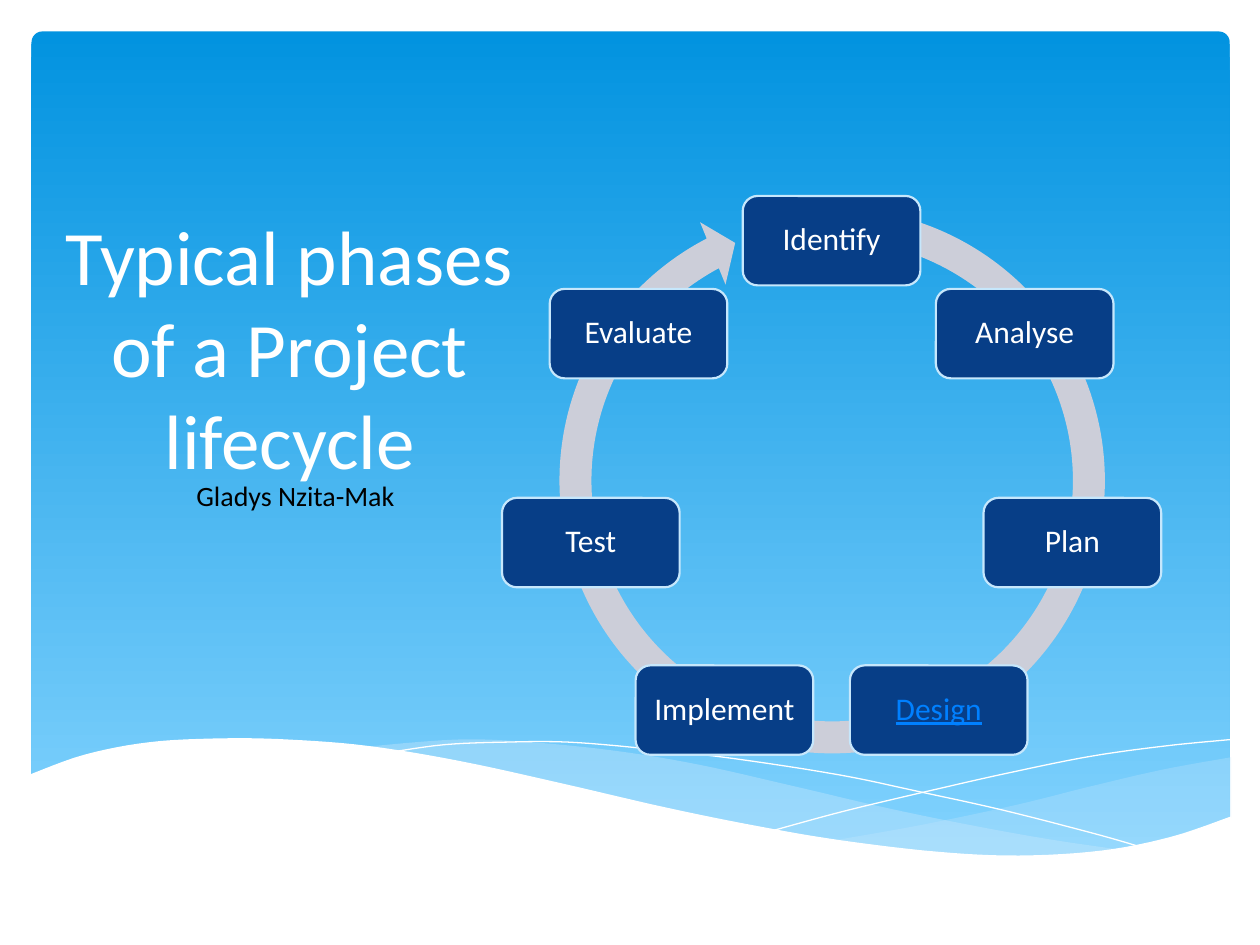
from dataclasses import dataclass, field
from math import cos, pi, sin
from lxml.etree import SubElement
from pptx import Presentation
from pptx.dml.color import RGBColor
from pptx.enum.shapes import MSO_SHAPE
from pptx.enum.text import MSO_ANCHOR, PP_ALIGN
from pptx.oxml.ns import qn
from pptx.slide import Slide
from pptx.util import Inches, Pt


def tint(color, value):
    color.rgb = RGBColor.from_string(value)


def apply(target, values):
    for name, value in values.items():
        setattr(target, name, value)


def smooth(knots, steps=6):
    ends = [knots[0], *knots, knots[-1]]
    points = [knots[0]]
    for a, b, c, d in zip(ends, ends[1:], ends[2:], ends[3:]):
        for step in range(1, steps + 1):
            t = step / steps
            points.append(tuple(
                (2 * q + (r - p) * t + (2 * p - 5 * q + 4 * r - s) * t ** 2
                 + (3 * q - p - 3 * r + s) * t ** 3) / 2
                for p, q, r, s in zip(a, b, c, d)))
    return points


@dataclass
class Deck:
    slide: Slide
    font: str = "Calibri"
    navy: str = "073E87"
    pale: str = "C6E7FC"
    white: str = "FFFFFF"
    inset: dict = field(default_factory=lambda: {
        "margin_left": Inches(0.1), "margin_right": Inches(0.1),
        "margin_top": Inches(0.05), "margin_bottom": Inches(0.05)})

    def letter(self, shape, text, size, color, anchor, **extra):
        frame = shape.text_frame
        apply(frame, {**self.inset, "word_wrap": True,
                      "vertical_anchor": anchor})
        line = frame.paragraphs[0]
        apply(line, {"alignment": PP_ALIGN.CENTER,
                     "line_spacing": extra.pop("spacing", 1.0)})
        run = line.add_run()
        run.text = text
        apply(run.font, {"name": self.font, "size": Pt(size), **extra})
        tint(run.font.color, color)

    def label(self, box, text, size, color, anchor):
        shape = self.slide.shapes.add_textbox(*map(Inches, box))
        self.letter(shape, text, size, color, anchor)

    def paint(self, shape, fill=None, line=None, width=0, alpha=None):
        shape.shadow.inherit = False
        if fill:
            shape.fill.solid()
            tint(shape.fill.fore_color, fill)
        else:
            shape.fill.background()
        if alpha:
            node = shape.element.spPr.find(".//" + qn("a:srgbClr"))
            SubElement(node, qn("a:alpha")).set("val", str(alpha * 1000))
        if line:
            tint(shape.line.color, line)
            shape.line.width = Pt(width)
        else:
            shape.line.fill.background()
        return shape

    def shape(self, kind, box, adjust=(), **style):
        shape = self.slide.shapes.add_shape(kind, *map(Inches, box))
        for spot, value in enumerate(adjust):
            shape.adjustments[spot] = value
        return self.paint(shape, **style)

    def panel(self, box, top, bottom):
        shape = self.shape(MSO_SHAPE.ROUNDED_RECTANGLE, box, [0.013])
        shape.fill.gradient()
        shape.fill.gradient_angle = 270
        for stop, color, place in zip(shape.fill.gradient_stops,
                                      (top, bottom), (0, 1)):
            tint(stop.color, color)
            stop.position = place

    def wave(self, points, close=True, **style):
        spots = [(Inches(x), Inches(y)) for x, y in points]
        pen = self.slide.shapes.build_freeform(*spots[0])
        pen.add_line_segments(spots[1:], close=close)
        self.paint(pen.convert_to_shape(), **style)

    def phase(self, x, y, text, **extra):
        wide, high = 1.41, 0.71
        shape = self.shape(MSO_SHAPE.ROUNDED_RECTANGLE,
                           (x - wide / 2, y - high / 2, wide, high),
                           fill=self.navy, line=self.pale, width=1.25)
        color = extra.pop("color", self.white)
        self.letter(shape, text, 18, color, MSO_ANCHOR.MIDDLE,
                    spacing=0.9, **extra)


def main():
    show = Presentation()
    apply(show, {"slide_width": Inches(10), "slide_height": Inches(7.5)})
    deck = Deck(show.slides.add_slide(show.slide_layouts[6]))

    deck.panel((0.25, 0.25, 9.51, 6.6), "0293E0", "83D3FE")
    deck.wave(
        smooth([(9.77, 6.01), (9.22, 6.11), (8.62, 6.25), (8.06, 6.39),
                (7.3, 6.55), (6.62, 6.67)])
        + smooth([(6.62, 6.67), (7.19, 6.74), (7.7, 6.79), (8.15, 6.8),
                  (8.64, 6.77), (9.14, 6.69), (9.77, 6.49)]),
        fill=deck.pale, alpha=29)
    deck.wave(
        smooth([(8.94, 6.75), (8.38, 6.67), (7.76, 6.56), (7.07, 6.42),
                (6.3, 6.24), (5.55, 6.07), (4.89, 5.96), (4.2, 5.89),
                (3.62, 5.87), (2.87, 5.93)])
        + smooth([(2.87, 5.93), (3.63, 6.04), (4.5, 6.24), (5.3, 6.42),
                  (6.02, 6.57), (6.66, 6.68), (7.37, 6.77), (8.08, 6.8),
                  (8.94, 6.75)]),
        fill=deck.pale, alpha=40)
    for knots in (
            [(3.1, 5.97), (3.53, 5.91), (4.02, 5.89), (4.51, 5.89),
             (5.11, 5.94), (5.82, 6.02), (6.66, 6.15), (7.28, 6.28),
             (7.96, 6.43), (8.7, 6.62), (9.08, 6.73)],
            [(6.14, 6.59), (6.73, 6.43), (7.49, 6.25), (8.07, 6.12),
             (8.67, 6), (9.25, 5.92), (9.76, 5.87)]):
        deck.wave(smooth(knots), close=False, line=deck.white)
    deck.wave(
        smooth([(9.77, 6.48), (9.3, 6.64), (8.75, 6.75), (8.09, 6.79),
                (7.44, 6.76), (6.68, 6.67), (6.03, 6.56), (5.29, 6.41),
                (4.47, 6.22), (3.65, 6.04), (2.92, 5.92), (2.3, 5.87),
                (1.77, 5.86), (1.19, 5.89), (0.67, 5.99), (0.23, 6.15)])
        + [(0.23, 7.31), (9.77, 7.31)], fill=deck.white)

    deck.label((0.35, 1.15, 3.9, 2.75), "Typical phases of a Project lifecycle",
               44, deck.white, MSO_ANCHOR.BOTTOM)
    deck.label((0.83, 3.75, 3.03, 0.47), "Gladys Nzita-Mak",
               16, "000000", MSO_ANCHOR.TOP)

    deck.shape(MSO_SHAPE.CIRCULAR_ARROW, (4.3, 1.51, 4.61, 4.61),
               (0.055, 3.307, 145.369, 169.381, 0.058), fill="CCCED9")
    names = ["Identify", "Analyse", "Plan", "Design", "Implement", "Test",
             "Evaluate"]
    marks = {"Design": {"color": "0080FF", "underline": True}}
    for turn, name in enumerate(names):
        angle = 2 * pi * turn / len(names)
        deck.phase(6.6 + 1.96 * sin(angle), 3.87 - 1.96 * cos(angle),
                   name, **marks.get(name, {}))

    show.save("out.pptx")


if __name__ == "__main__":
    main()
